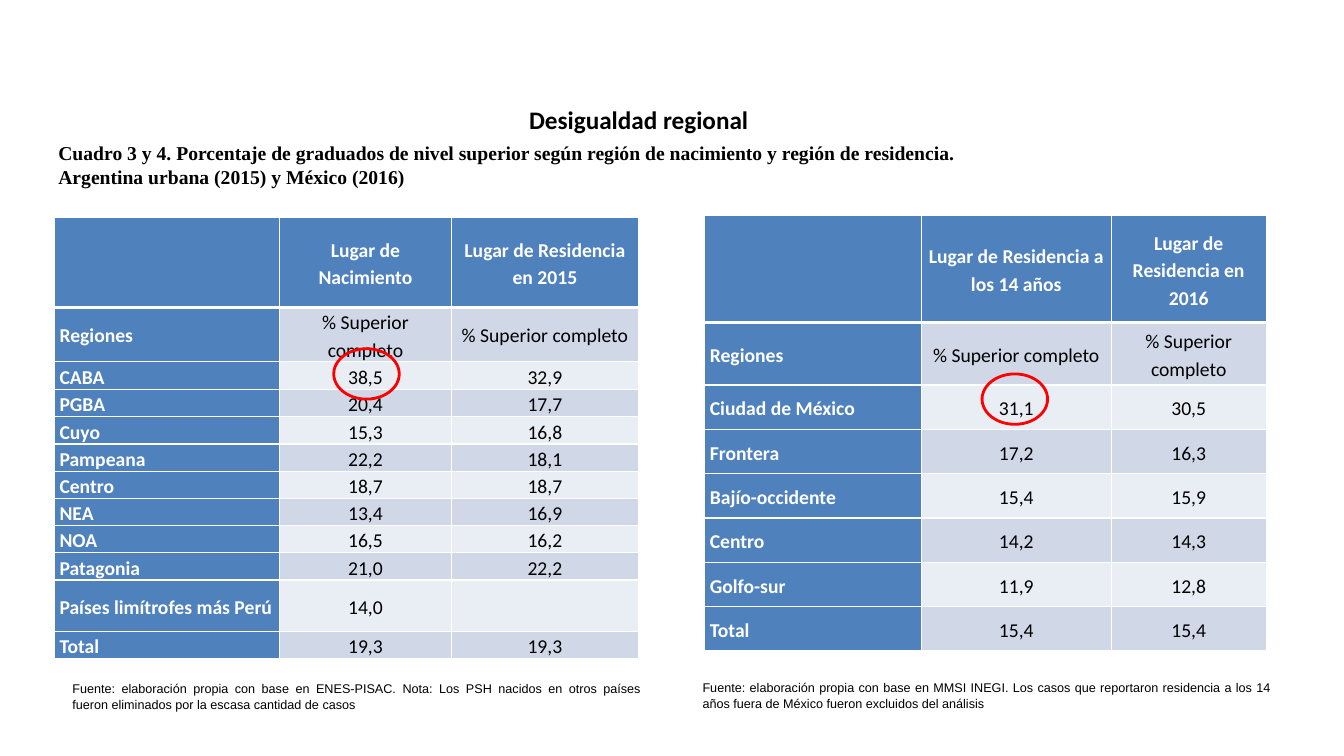
from dataclasses import dataclass

from lxml.etree import SubElement
from pptx import Presentation
from pptx.dml.color import RGBColor
from pptx.enum.shapes import MSO_SHAPE
from pptx.enum.text import MSO_ANCHOR, PP_ALIGN
from pptx.oxml.ns import qn
from pptx.slide import Slide
from pptx.table import _Cell
from pptx.util import Emu, Pt

PX = 9144  # EMU per px, 100 px to the inch

WHITE = RGBColor(0xFF, 0xFF, 0xFF)
BLACK = RGBColor(0x00, 0x00, 0x00)
RED = RGBColor(0xFF, 0x00, 0x00)
BLUE = RGBColor(0x4F, 0x81, 0xBD)
DARK_BAND = RGBColor(0xD0, 0xD8, 0xE8)
LIGHT_BAND = RGBColor(0xE9, 0xED, 0xF4)


@dataclass
class Box:
    left: int
    top: int
    width: int
    height: int

    def emu(self) -> list[Emu]:
        return [Emu(n * PX) for n in (self.left, self.top, self.width, self.height)]


@dataclass
class Caption:
    box: Box
    lines: list[str]
    font: str
    size: int
    bold: bool
    align: PP_ALIGN
    anchor: MSO_ANCHOR = MSO_ANCHOR.MIDDLE


@dataclass
class RegionTable:
    left: int
    top: int
    columns: list[int]
    heights: list[int]
    rows: list[tuple[str, str, str]]


UNIT_ROW = ("Regiones", "% Superior completo", "% Superior completo")

CAPTIONS = [
    Caption(Box(273, 99, 721, 40), ["Desigualdad regional"],
            "Calibri", 18, True, PP_ALIGN.CENTER, MSO_ANCHOR.TOP),
    Caption(Box(48, 135, 1209, 57),
            ["Cuadro 3 y 4. Porcentaje de graduados de nivel superior según región de "
             "nacimiento y región de residencia.",
             "Argentina urbana (2015) y México (2016)"],
            "Times New Roman", 14, True, PP_ALIGN.JUSTIFY),
    Caption(Box(687, 670, 583, 40),
            ["Fuente: elaboración propia con base en MMSI INEGI. Los casos que reportaron "
             "residencia a los 14 años fuera de México fueron excluidos del análisis"],
            "Arial", 9, False, PP_ALIGN.JUSTIFY),
    Caption(Box(62, 671, 583, 40),
            ["Fuente: elaboración propia con base en ENES-PISAC. Nota: Los PSH nacidos en "
             "otros países fueron eliminados por la escasa cantidad de casos"],
            "Arial", 9, False, PP_ALIGN.JUSTIFY),
]

TABLES = [
    # Argentina
    RegionTable(54, 216, [223, 171, 185], [89, 53, 28] + [27] * 7 + [51, 27], [
        ("", "Lugar de Nacimiento", "Lugar de Residencia en 2015"),
        UNIT_ROW,
        ("CABA", "38,5", "32,9"),
        ("PGBA", "20,4", "17,7"),
        ("Cuyo", "15,3", "16,8"),
        ("Pampeana", "22,2", "18,1"),
        ("Centro", "18,7", "18,7"),
        ("NEA", "13,4", "16,9"),
        ("NOA", "16,5", "16,2"),
        ("Patagonia", "21,0", "22,2"),
        ("Países limítrofes más Perú", "14,0", ""),
        ("Total", "19,3", "19,3"),
    ]),
    # Mexico
    RegionTable(699, 214, [215, 188, 154], [106, 62] + [44] * 6, [
        ("", "Lugar de Residencia a los 14 años", "Lugar de Residencia en 2016"),
        UNIT_ROW,
        ("Ciudad de México", "31,1", "30,5"),
        ("Frontera", "17,2", "16,3"),
        ("Bajío-occidente", "15,4", "15,9"),
        ("Centro", "14,2", "14,3"),
        ("Golfo-sur", "11,9", "12,8"),
        ("Total", "15,4", "15,4"),
    ]),
]

HIGHLIGHTS = [Box(331, 346, 65, 50), Box(974, 371, 65, 50)]


def add_caption(slide: Slide, caption: Caption) -> None:
    frame = slide.shapes.add_textbox(*caption.box.emu()).text_frame
    frame.word_wrap = True
    frame.vertical_anchor = caption.anchor
    frame.text = "\n".join(caption.lines)
    for paragraph in frame.paragraphs:
        paragraph.alignment = caption.align
        paragraph.font.name = caption.font
        paragraph.font.size = Pt(caption.size)
        paragraph.font.bold = caption.bold
        paragraph.font.color.rgb = BLACK


def set_borders(cell: _Cell, row: int) -> None:
    """White rules, with a thick one between the header and the body."""
    widths = {"L": 1, "R": 1, "T": 3 if row == 1 else 1, "B": 3 if row == 0 else 1}
    properties = cell._tc.get_or_add_tcPr()
    for side, width in widths.items():
        line = SubElement(properties, qn(f"a:ln{side}"), w=str(Pt(width)))
        fill = SubElement(line, qn("a:solidFill"))
        SubElement(fill, qn("a:srgbClr"), val=str(WHITE))


def style_cell(cell: _Cell, text: str, row: int, column: int) -> None:
    heading = row == 0 or column == 0
    set_borders(cell, row)
    cell.fill.solid()
    cell.fill.fore_color.rgb = BLUE if heading else DARK_BAND if row % 2 else LIGHT_BAND
    cell.vertical_anchor = MSO_ANCHOR.MIDDLE
    cell.margin_left = cell.margin_right = Emu(5 * PX)
    cell.margin_top = cell.margin_bottom = 0
    cell.text = text
    paragraph = cell.text_frame.paragraphs[0]
    paragraph.alignment = PP_ALIGN.CENTER if column else PP_ALIGN.LEFT
    paragraph.line_spacing = 1.15
    paragraph.font.name = "Calibri"
    paragraph.font.size = Pt(14)
    paragraph.font.bold = heading
    paragraph.font.color.rgb = WHITE if heading else BLACK


def add_region_table(slide: Slide, region: RegionTable) -> None:
    box = Box(region.left, region.top, sum(region.columns), sum(region.heights))
    table = slide.shapes.add_table(len(region.rows), len(region.columns), *box.emu()).table
    table.first_row = table.horz_banding = False
    for column, width in zip(table.columns, region.columns):
        column.width = Emu(width * PX)
    for row, height in zip(table.rows, region.heights):
        row.height = Emu(height * PX)
    for row, texts in enumerate(region.rows):
        for column, text in enumerate(texts):
            style_cell(table.cell(row, column), text, row, column)


def add_highlight(slide: Slide, box: Box) -> None:
    shape = slide.shapes.add_shape(MSO_SHAPE.OVAL, *box.emu())
    shape.shadow.inherit = False
    shape.fill.background()
    shape.line.color.rgb = RED
    shape.line.width = Pt(2)


def main() -> None:
    presentation = Presentation()
    presentation.slide_width = Emu(1333 * PX)
    presentation.slide_height = Emu(750 * PX)
    slide = presentation.slides.add_slide(presentation.slide_layouts[6])
    for caption in CAPTIONS:
        add_caption(slide, caption)
    for region in TABLES:
        add_region_table(slide, region)
    for box in HIGHLIGHTS:
        add_highlight(slide, box)
    presentation.save("out.pptx")


if __name__ == "__main__":
    main()
